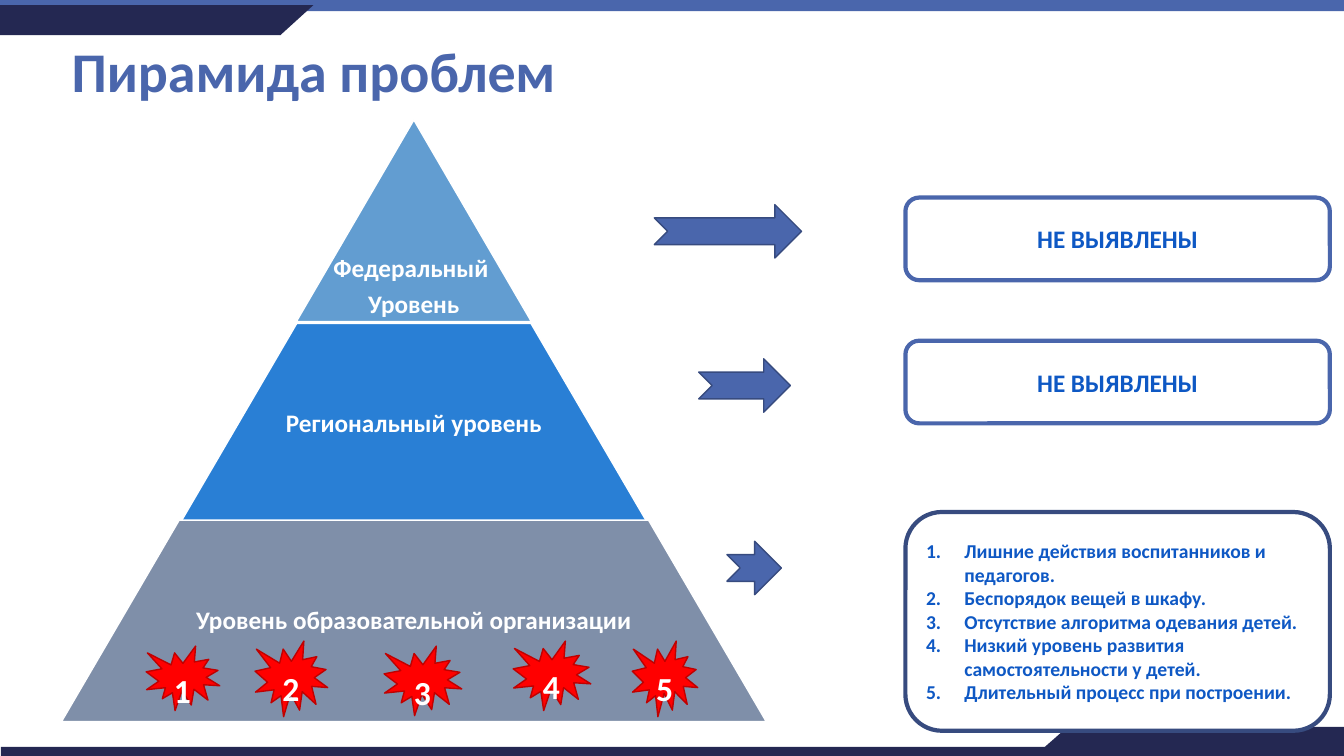
from pptx import Presentation
from pptx.dml.color import RGBColor
from pptx.enum.shapes import MSO_SHAPE as Preset
from pptx.enum.text import MSO_ANCHOR as Anchor, PP_ALIGN as Align
from pptx.oxml.xmlchemy import OxmlElement
from pptx.util import Inches, Pt

SLIDE_WIDTH, SLIDE_HEIGHT = Inches(13.33), Inches(7.5)
COLUMN, ROW = SLIDE_WIDTH / 133.3, SLIDE_HEIGHT / 75
FONT = "Calibri"
WHITE, NAVY, BLUE, DARK_BLUE = "FFFFFF", "242852", "4A66AC", "374B7F"
TEXT_BLUE, RED, DARK_RED = "0E58C4", "FF0000", "C00000"
PYRAMID_CENTER, LEVEL_STEP, LEVEL_HEIGHT = 41.05, 23.3, 20

LEVELS = [
    (11.9, "629DD1", ["Федеральный ", "Уровень"], 1, Anchor.BOTTOM),
    (32.1, "297FD5", ["Региональный уровень"], 0.65, Anchor.MIDDLE),
    (51.6, "7F8FA9", ["Уровень образовательной организации"], 0.65, Anchor.MIDDLE),
]
ARROWS = [(64.9, 20.3, 14.6), (69.3, 35.6, 9.1), (72.1, 53.7, 5.4)]
STARS = [
    (14.5, 64.1, 7.3, 6.4),
    (25.3, 63.6, 7.2, 7.5),
    (38.1, 64.1, 7.7, 6.9),
    (50.9, 63.6, 7.7, 6.9),
    (62.7, 63.6, 6.5, 7.5),
]
PROBLEMS = [
    "Лишние действия воспитанников и педагогов.",
    "Беспорядок вещей в шкафу.",
    "Отсутствие алгоритма одевания детей.",
    "Низкий уровень развития самостоятельности у детей.",
    "Длительный процесс при построении.",
]


def color(hex_string):
    return RGBColor.from_string(hex_string)


def grid(left, top, width, height):
    return (round(left * COLUMN), round(top * ROW),
            round(width * COLUMN), round(height * ROW))


def add_shape(slide, preset, box, fill, line=None, line_width=1):
    shape = slide.shapes.add_shape(preset, *grid(*box))
    shape.shadow.inherit = False
    shape.fill.solid()
    shape.fill.fore_color.rgb = color(fill)
    if line:
        shape.line.color.rgb = color(line)
        shape.line.width = Pt(line_width)
    else:
        shape.line.fill.background()
    return shape


def number_paragraph(paragraph):
    properties = paragraph._p.get_or_add_pPr()
    properties.set("marL", str(Inches(0.38)))
    properties.set("indent", str(-Inches(0.38)))
    numbering = OxmlElement("a:buAutoNum")
    numbering.set("type", "arabicPeriod")
    properties.append(numbering)


def write(shape, lines, size, font_color, align=Align.CENTER,
          anchor=Anchor.MIDDLE, spacing=None, after=None, numbered=False):
    frame = shape.text_frame
    frame.word_wrap = True
    frame.vertical_anchor = anchor
    for index, line in enumerate(lines):
        paragraph = frame.paragraphs[0] if index == 0 else frame.add_paragraph()
        paragraph.text = line
        paragraph.alignment = align
        if spacing:
            paragraph.line_spacing = spacing
        if after:
            paragraph.space_after = Pt(after)
        if numbered:
            number_paragraph(paragraph)
        font = paragraph.font
        font.name, font.size, font.bold = FONT, Pt(size), True
        font.color.rgb = color(font_color)


def add_frame(slide):
    add_shape(slide, Preset.RECTANGLE, (0, 0, 133.3, 1.1), BLUE)
    add_shape(slide, Preset.RECTANGLE, (0.1, 74.1, 133.2, 0.9), NAVY)
    add_shape(slide, Preset.RECTANGLE, (0, 0.5, 27.8, 3), NAVY)
    add_shape(slide, Preset.FLOWCHART_MERGE, (24.5, 0.5, 6.6, 3), NAVY)
    add_shape(slide, Preset.RECTANGLE, (105.9, 72.1, 27.4, 2.9), NAVY)
    corner = add_shape(slide, Preset.FLOWCHART_MERGE, (102.6, 72.1, 6.6, 2.9), NAVY)
    corner.rotation = 180


def add_level(slide, number, top, fill, lines, text_share, anchor):
    width = LEVEL_STEP * number
    level = add_shape(
        slide, Preset.TRAPEZOID,
        (PYRAMID_CENTER - width / 2, top, width, LEVEL_HEIGHT), fill, WHITE)
    level.adjustments[0] = 0.584
    text_width = width * text_share
    label = slide.shapes.add_textbox(*grid(
        PYRAMID_CENTER - text_width / 2, top, text_width, LEVEL_HEIGHT))
    frame = label.text_frame
    frame.margin_left = frame.margin_right = Inches(0.03)
    frame.margin_top = frame.margin_bottom = Inches(0.03)
    write(label, lines, 18, WHITE, anchor=anchor, spacing=0.9, after=6.3)


def add_card(slide, top, height, line):
    return add_shape(slide, Preset.ROUNDED_RECTANGLE,
                     (89.8, top, 42.1, height), WHITE, line, 3)


def add_title(slide):
    title = slide.shapes.title
    title.left, title.top, title.width, title.height = grid(6.1, 0.1, 115, 14.5)
    write(title, ["Пирамида проблем"], 40, BLUE, align=Align.LEFT, spacing=0.9)


def main():
    presentation = Presentation()
    presentation.slide_width, presentation.slide_height = SLIDE_WIDTH, SLIDE_HEIGHT
    slide = presentation.slides.add_slide(presentation.slide_layouts[5])
    add_frame(slide)
    add_title(slide)
    for number, level in enumerate(LEVELS, 1):
        add_level(slide, number, *level)
    for top in (19.6, 33.8):
        write(add_card(slide, top, 8.2, BLUE), ["НЕ ВЫЯВЛЕНЫ"], 18, TEXT_BLUE)
    write(add_card(slide, 50.8, 21.7, DARK_BLUE), PROBLEMS, 14, TEXT_BLUE,
          align=Align.LEFT, numbered=True)
    for number, box in enumerate(STARS, 1):
        star = add_shape(slide, Preset.EXPLOSION1, box, RED, DARK_RED)
        write(star, [str(number)], 24, WHITE, anchor=Anchor.TOP)
    for left, top, width in ARROWS:
        add_shape(slide, Preset.NOTCHED_RIGHT_ARROW, (left, top, width, 5.3),
                  BLUE, DARK_BLUE)
    presentation.save("out.pptx")


if __name__ == "__main__":
    main()
